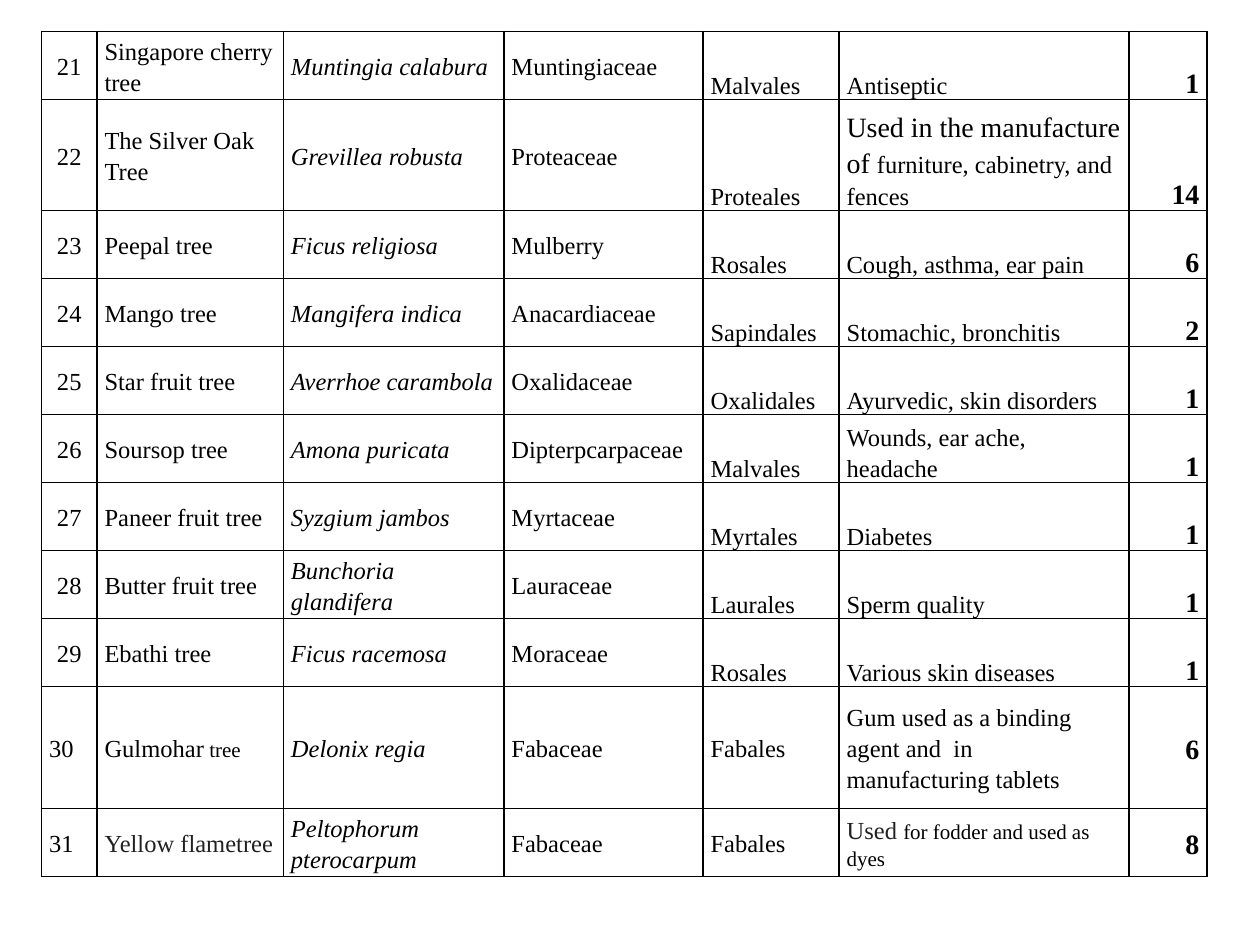
from lxml import etree
from pptx import Presentation
from pptx import util as u
from pptx.dml import color
from pptx.enum import text
from pptx.oxml import ns

THEME = {
    "font": "Times New Roman",
    "ink": "000000", "charcoal": "202122", "graphite": "202124",
    "small": 12, "body": 14, "large": 16,
    "border": 1, "spacing": 1.15, "inset": 0.06,
}

# Content: a cell is a string, or a list of (words, size, colour) runs
TREES = [
    ("21", "Singapore cherry tree", "Muntingia calabura", "Muntingiaceae", "Malvales", "Antiseptic", "1"),
    ("22", "The Silver Oak Tree", "Grevillea robusta", "Proteaceae", "Proteales",
     [("Used in the manufacture of ", "large", "ink"),
      ("furniture, cabinetry, and fences", "body", "ink")], "14"),
    ("23", "Peepal tree", "Ficus religiosa", "Mulberry", "Rosales", "Cough, asthma, ear pain", "6"),
    ("24", "Mango tree", "Mangifera indica", "Anacardiaceae", "Sapindales", "Stomachic, bronchitis", "2"),
    ("25", "Star fruit tree", "Averrhoe carambola", "Oxalidaceae", "Oxalidales", "Ayurvedic, skin disorders", "1"),
    ("26", "Soursop tree", "Amona puricata", "Dipterpcarpaceae", "Malvales", "Wounds, ear ache, headache", "1"),
    ("27", "Paneer fruit tree", "Syzgium jambos", "Myrtaceae", "Myrtales", "Diabetes", "1"),
    ("28", "Butter fruit tree", "Bunchoria glandifera", "Lauraceae", "Laurales", "Sperm quality", "1"),
    ("29", "Ebathi tree", "Ficus racemosa", "Moraceae", "Rosales", "Various skin diseases", "1"),
    ("30", [("Gulmohar", "body", "ink"), (" tree", "small", "ink")], "Delonix regia", "Fabaceae", "Fabales",
     "Gum used as a binding agent and  in manufacturing tablets", "6"),
    ("31", [("Yellow flametree", "body", "charcoal")], "Peltophorum pterocarpum", "Fabaceae", "Fabales",
     [("Used ", "body", "graphite"), ("for fodder and used as dyes", "small", "ink")], "8"),
]

# Grid
LEFT, TOP = 0.33, 0.25
COLUMNS = [0.44, 1.48, 1.75, 1.58, 1.08, 2.3, 0.62]
ROW_HEIGHT, TALL_ROWS = 0.54, {"22": 0.88, "30": 0.97}
NUMBER, SPECIES, ORDER, COUNT = 0, 2, 4, 6
CENTRED_ROWS = ("30", "31")  # every cell sits mid-height, number at the left


def add_borders(cell):
    props = cell._tc.get_or_add_tcPr()
    for position, side in enumerate(("a:lnL", "a:lnR", "a:lnT", "a:lnB")):
        line = etree.Element(ns.qn(side), w=str(u.Pt(THEME["border"])))
        fill = etree.SubElement(line, ns.qn("a:solidFill"))
        etree.SubElement(fill, ns.qn("a:srgbClr"), val=THEME["ink"])
        props.insert(position, line)


def fill_cell(cell, content, column, centred):
    cell.fill.background()
    add_borders(cell)
    cell.margin_left = cell.margin_right = u.Inches(THEME["inset"])
    cell.margin_top = cell.margin_bottom = 0
    low = column >= ORDER and not centred
    cell.vertical_anchor = text.MSO_ANCHOR.BOTTOM if low else text.MSO_ANCHOR.MIDDLE

    paragraph = cell.text_frame.paragraphs[0]
    paragraph.line_spacing = THEME["spacing"]
    if column == COUNT:
        paragraph.alignment = text.PP_ALIGN.RIGHT
    elif column == NUMBER and not centred:
        paragraph.alignment = text.PP_ALIGN.CENTER
    else:
        paragraph.alignment = text.PP_ALIGN.LEFT

    if isinstance(content, str):
        content = [(content, "large" if column == COUNT else "body", "ink")]
    for words, size, ink in content:
        run = paragraph.add_run()
        run.text = words
        run.font.name = THEME["font"]
        run.font.size = u.Pt(THEME[size])
        run.font.color.rgb = color.RGBColor.from_string(THEME[ink])
        run.font.italic = column == SPECIES
        run.font.bold = column == COUNT


def main():
    deck = Presentation()
    deck.slide_width, deck.slide_height = u.Inches(10), u.Inches(7.5)
    slide = deck.slides.add_slide(deck.slide_layouts[6])

    # Tree table
    heights = [TALL_ROWS.get(tree[NUMBER], ROW_HEIGHT) for tree in TREES]
    trees = slide.shapes.add_table(
        len(TREES), len(COLUMNS), u.Inches(LEFT), u.Inches(TOP),
        u.Inches(sum(COLUMNS)), u.Inches(sum(heights))).table
    trees.first_row = trees.horz_banding = False
    for column, width in zip(trees.columns, COLUMNS):
        column.width = u.Inches(width)
    for row, height, tree in zip(trees.rows, heights, TREES):
        row.height = u.Inches(height)
        for column, content in enumerate(tree):
            fill_cell(row.cells[column], content, column, tree[NUMBER] in CENTRED_ROWS)

    deck.save("out.pptx")


if __name__ == "__main__":
    main()
